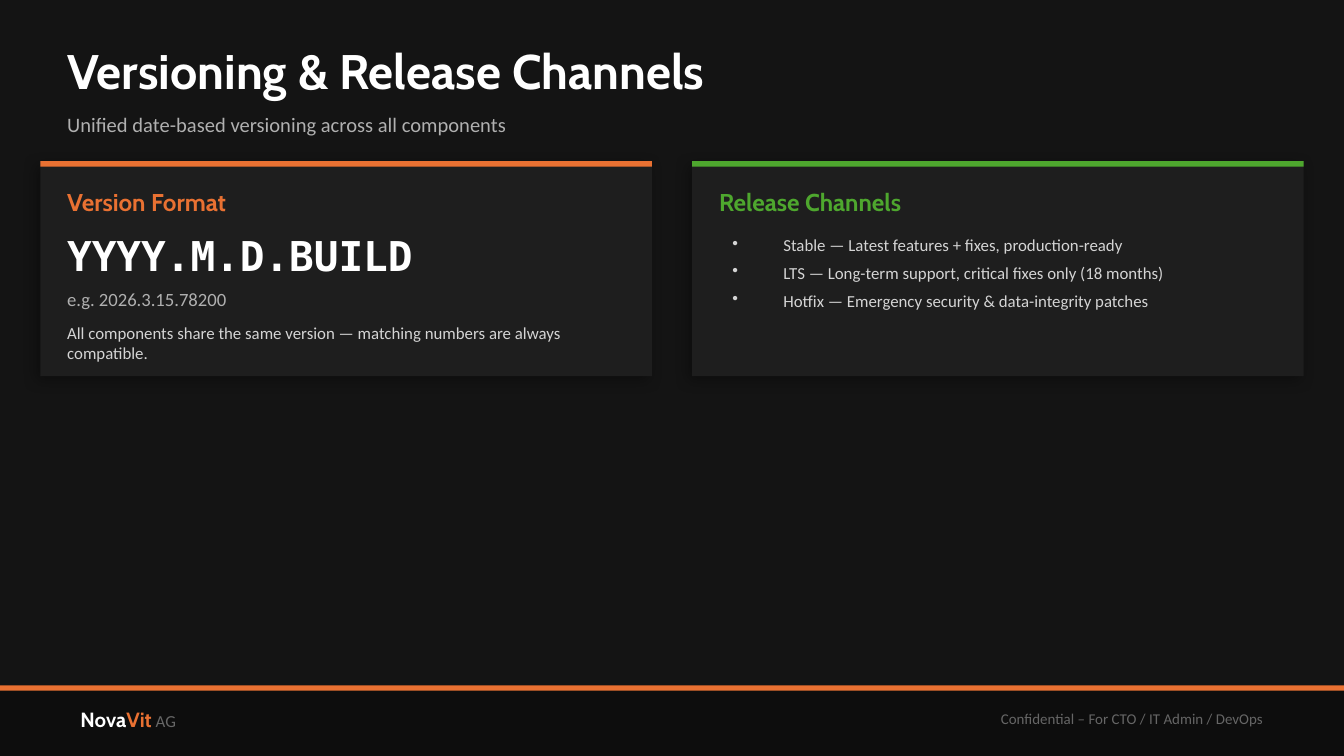
import pptx
import pptx.util
import pptx.dml.color
import pptx.enum.shapes
import pptx.enum.text
import pptx.oxml
import pptx.oxml.ns

WIDTH, HEIGHT = 10, 5.625
COLUMNS = 100
CELL = WIDTH / COLUMNS  # grid cells are square

HEADING, BODY, CODE = "Cabin", "Calibri", "DejaVu Sans Mono"
ORANGE, GREEN, WHITE = "E97132", "4EA72E", "FFFFFF"
BACKGROUND, FOOTER, CARD = "141414", "0D0D0D", "1E1E1E"
MUTED, LIGHT, DIM = "B0B0B0", "D4D4D4", "666666"

ALIGN = pptx.enum.text.PP_ALIGN
ANCHOR = pptx.enum.text.MSO_ANCHOR


def color(value):
    return pptx.dml.color.RGBColor.from_string(value)


def cells(count):
    return pptx.util.Inches(count * CELL)


def add_text(paragraph, text, size=9, font=BODY, fill=LIGHT, bold=False):
    run = paragraph.add_run()
    run.text = text
    run.font.size = pptx.util.Pt(size)
    run.font.name = font
    run.font.color.rgb = color(fill)
    run.font.bold = bold


def add_bullet(paragraph, indent=0.38):
    properties = paragraph._p.get_or_add_pPr()
    distance = pptx.util.Inches(indent)
    properties.set("marL", str(distance))
    properties.set("indent", str(-distance))
    bullet = pptx.oxml.parse_xml(
        f'<a:buChar {pptx.oxml.ns.nsdecls("a")} char="•"/>')
    properties.append(bullet)


def add_shadow(shape, opacity=35, blur=8, distance=3, angle=135):
    """Give the shape a soft black outer shadow; blur and distance in points."""
    effects = pptx.oxml.parse_xml(
        f'<a:effectLst {pptx.oxml.ns.nsdecls("a")}>'
        f'<a:outerShdw blurRad="{pptx.util.Pt(blur)}" dist="{pptx.util.Pt(distance)}"'
        f' dir="{angle * 60000}" algn="bl" rotWithShape="0">'
        f'<a:srgbClr val="000000"><a:alpha val="{opacity * 1000}"/></a:srgbClr>'
        '</a:outerShdw></a:effectLst>')
    properties = shape._element.spPr
    properties.replace(properties.find(pptx.oxml.ns.qn("a:effectLst")), effects)


class SlideBuilder:
    """Holds the slide and its style; lengths are grid columns and rows."""

    def __init__(self, presentation):
        self.slide = presentation.slides.add_slide(presentation.slide_layouts[5])
        background = self.slide.background.fill
        background.solid()
        background.fore_color.rgb = color(BACKGROUND)

    def rectangle(self, column, row, width, height, fill, shadow=False):
        shape = self.slide.shapes.add_shape(
            pptx.enum.shapes.MSO_SHAPE.RECTANGLE,
            cells(column), cells(row), cells(width), cells(height))
        shape.fill.solid()
        shape.fill.fore_color.rgb = color(fill)
        shape.line.fill.background()
        shape.shadow.inherit = False
        if shadow:
            add_shadow(shape)

    def frame(self, shape, anchor=ANCHOR.MIDDLE, inset=False):
        frame = shape.text_frame
        frame.word_wrap = True
        frame.auto_size = pptx.enum.text.MSO_AUTO_SIZE.NONE
        frame.vertical_anchor = anchor
        if not inset:
            frame.margin_left = frame.margin_right = 0
            frame.margin_top = frame.margin_bottom = 0
        return frame

    def title(self, column, row, width, height, text, **style):
        shape = self.slide.shapes.title
        shape.left, shape.top = cells(column), cells(row)
        shape.width, shape.height = cells(width), cells(height)
        paragraph = self.frame(shape).paragraphs[0]
        paragraph.alignment = ALIGN.LEFT
        add_text(paragraph, text, **style)

    def box(self, column, row, width, height, **layout):
        shape = self.slide.shapes.add_textbox(
            cells(column), cells(row), cells(width), cells(height))
        return self.frame(shape, **layout)

    def line(self, column, row, width, height, text, **style):
        """Place a box with one run of text."""
        add_text(self.box(column, row, width, height).paragraphs[0], text, **style)

    def bullets(self, column, row, width, height, items):
        frame = self.box(column, row, width, height, anchor=ANCHOR.TOP, inset=True)
        for index, item in enumerate(items):
            paragraph = frame.add_paragraph() if index else frame.paragraphs[0]
            add_bullet(paragraph)
            paragraph.space_after = pptx.util.Pt(4)
            add_text(paragraph, item)

    def card(self, column, heading, accent, row=12, width=45.5, height=16, padding=2):
        """Draw a card and return the left and width of its content."""
        self.rectangle(column, row, width, height, CARD, shadow=True)
        self.rectangle(column, row, width, 0.4, accent)
        left, inner = column + padding, width - 2 * padding
        self.line(left, row + 1.5, inner, 3, heading,
                  size=13, font=HEADING, fill=accent, bold=True)
        return left, inner

    def footer(self, name_parts, notice, row=51):
        self.rectangle(0, row, COLUMNS, HEIGHT / CELL - row, FOOTER)
        self.rectangle(0, row, COLUMNS, 0.4, ORANGE)
        company = self.box(5, row + 0.5, 30, 4, inset=True).paragraphs[0]
        for text, style in name_parts:
            add_text(company, text, **style)
        paragraph = self.box(55, row + 0.5, 40, 4, inset=True).paragraphs[0]
        paragraph.alignment = ALIGN.RIGHT
        add_text(paragraph, notice, size=8, fill=DIM)


def main():
    presentation = pptx.Presentation()
    presentation.slide_width = pptx.util.Inches(WIDTH)
    presentation.slide_height = pptx.util.Inches(HEIGHT)
    builder = SlideBuilder(presentation)

    name_style = dict(size=11, font=HEADING, bold=True)
    builder.footer(
        [("Nova", dict(name_style, fill=WHITE)),
         ("Vit", dict(name_style, fill=ORANGE)),
         (" AG", dict(fill=DIM))],
        "Confidential – For CTO / IT Admin / DevOps")

    builder.title(5, 2.5, 90, 5.5, "Versioning & Release Channels",
                  size=26, font=HEADING, fill=WHITE, bold=True)
    builder.line(5, 7.5, 90, 3.5, "Unified date-based versioning across all components",
                 size=11, fill=MUTED)

    left, width = builder.card(3, "Version Format", ORANGE)
    builder.line(left, 17, width, 4, "YYYY.M.D.BUILD",
                 size=22, font=CODE, fill=WHITE, bold=True)
    builder.line(left, 21, width, 2.5, "e.g. 2026.3.15.78200", size=10, fill=MUTED)
    builder.line(left, 24, width, 3, "All components share the same version — "
                 "matching numbers are always compatible.")

    left, width = builder.card(51.5, "Release Channels", GREEN)
    builder.bullets(left, 17, width, 10, [
        "Stable — Latest features + fixes, production-ready",
        "LTS — Long-term support, critical fixes only (18 months)",
        "Hotfix — Emergency security & data-integrity patches"])

    presentation.save("out.pptx")


if __name__ == "__main__":
    main()
